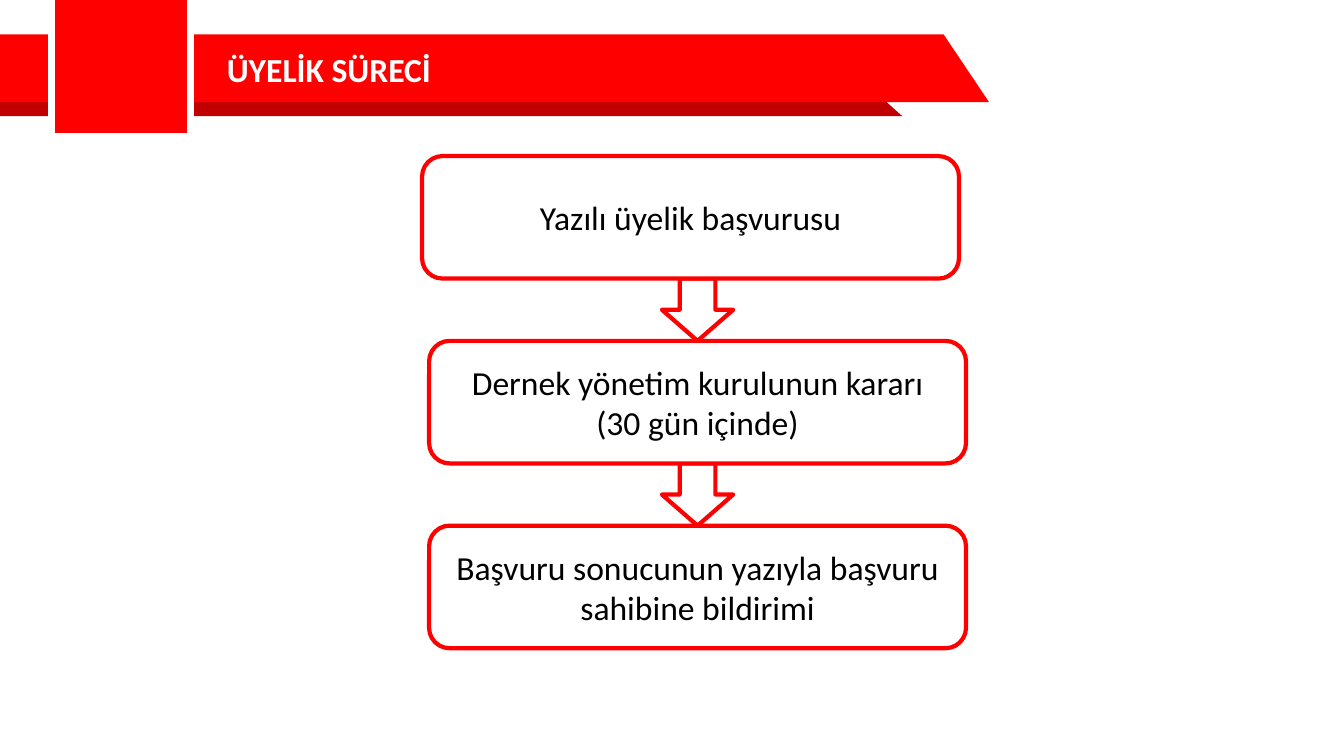
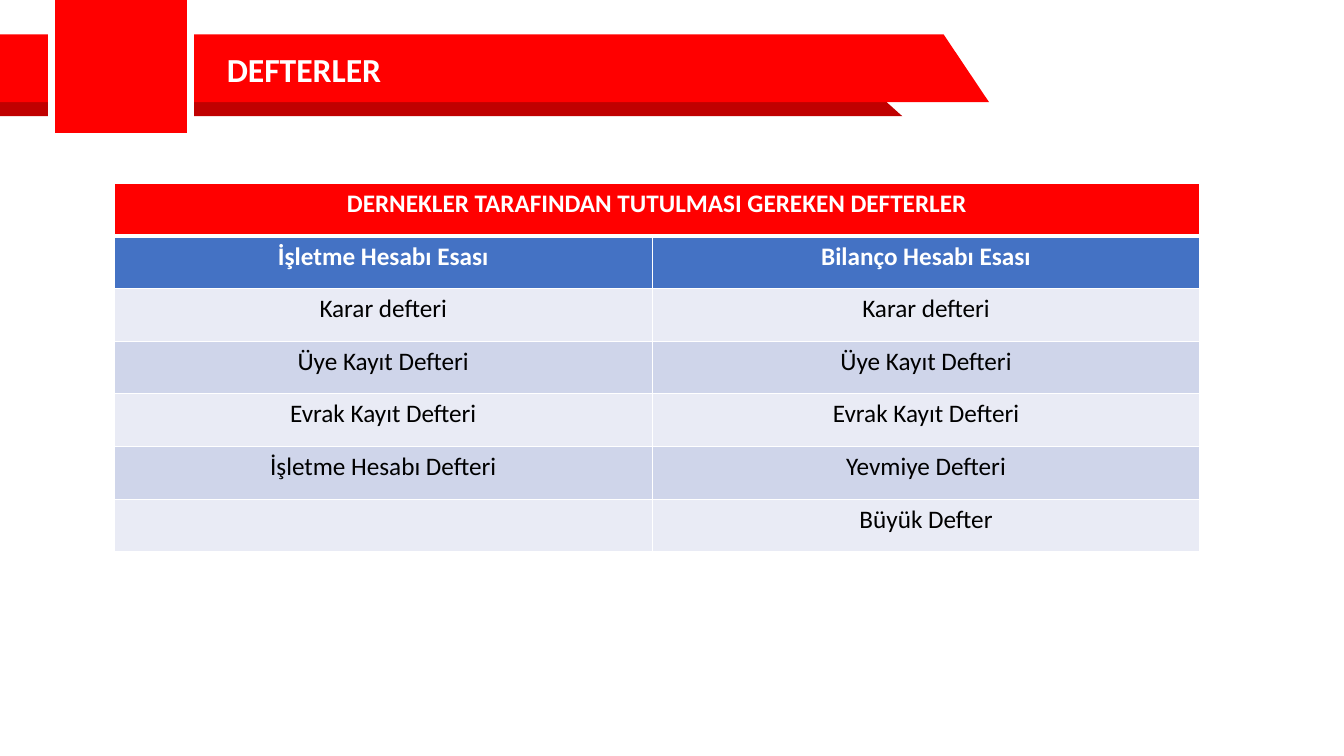
from lxml.etree import SubElement
from pptx import Presentation
from pptx.dml.color import RGBColor
from pptx.enum.shapes import MSO_SHAPE as SHAPE
from pptx.enum.text import MSO_ANCHOR as ANCHOR, MSO_AUTO_SIZE as AUTO_SIZE, PP_ALIGN as ALIGN
from pptx.oxml.ns import qn
from pptx.util import Pt

COLORS = {
    "red": "FF0000",
    "dark_red": "C00000",
    "blue": "4472C4",
    "light": "E9EBF5",
    "mid": "CFD5EA",
    "white": "FFFFFF",
    "black": "000000",
}
FONT = "Calibri"
TITLE_ONLY = 5


def rgb(name):
    return RGBColor.from_string(COLORS[name])


class Deck:
    """Holds the shared style and the slide being filled."""

    def __init__(self):
        self.prs = Presentation()
        self.prs.slide_width, self.prs.slide_height = Pt(960), Pt(540)
        self.layout = self.prs.slide_layouts[TITLE_ONLY]
        self.slide = None

    def start(self, title):
        first = self.slide is None
        self.slide = self.prs.slides.add_slide(self.layout)
        if first:
            self.decorate_layout()
        heading = self.slide.shapes.title
        heading.left, heading.top = Pt(154.8), Pt(31)
        heading.width, heading.height = Pt(500), Pt(36)
        frame = heading.text_frame
        frame.word_wrap = True
        frame.auto_size = AUTO_SIZE.NONE
        frame.vertical_anchor = ANCHOR.MIDDLE
        self.set_text(frame, title, 24, "white", bold=True, align=ALIGN.LEFT)

    def decorate_layout(self):
        """Draw the header on the first slide, then move it to the layout."""
        for holder in list(self.layout.placeholders):
            if holder.placeholder_format.idx != 0:
                self.layout.shapes.element.remove(holder.element)
        header = [
            self.band([(0, 34), (591, 35), (644.5, 83), (0, 83)], "dark_red"),
            self.band([(0, 24.5), (674, 24.5), (706.5, 73), (0, 73)], "red"),
            self.shape(SHAPE.RECTANGLE, 36.5, -11.5, 99.5, 109, "red", "white", 5),
        ]
        for part in header:
            self.layout.shapes.element.append(part.element)

    def band(self, points, fill):
        corners = [(Pt(x), Pt(y)) for x, y in points]
        builder = self.slide.shapes.build_freeform(*corners[0])
        builder.add_line_segments(corners[1:], close=True)
        return self.style(builder.convert_to_shape(), fill)

    def shape(self, kind, left, top, width, height, fill, line, line_width):
        added = self.slide.shapes.add_shape(kind, Pt(left), Pt(top), Pt(width), Pt(height))
        return self.style(added, fill, line, line_width)

    def style(self, shape, fill, line=None, line_width=0):
        shape.shadow.inherit = False
        shape.fill.solid()
        shape.fill.fore_color.rgb = rgb(fill)
        if line:
            shape.line.color.rgb = rgb(line)
            shape.line.width = Pt(line_width)
        else:
            shape.line.fill.background()
        return shape

    def set_text(self, frame, text, size, color, bold=False, align=ALIGN.CENTER):
        frame.text = text
        for paragraph in frame.paragraphs:
            paragraph.alignment = align
            font = paragraph.font
            font.name, font.size, font.bold = FONT, Pt(size), bold
            font.color.rgb = rgb(color)

    def step(self, text, left, top, width, height):
        box = self.shape(SHAPE.ROUNDED_RECTANGLE, left, top, width, height, "white", "red", 3)
        self.set_text(box.text_frame, text, 24, "black")

    def down_arrow(self, left, top, width, height):
        self.shape(SHAPE.DOWN_ARROW, left, top, width, height, "white", "red", 3)

    def table(self, rows, left, top, widths, row_height):
        """Build a table whose first row spans all columns and second row heads them."""
        table = self.slide.shapes.add_table(
            len(rows), len(widths), Pt(left), Pt(top),
            Pt(sum(widths)), Pt(row_height * len(rows))).table
        table.first_row = table.horz_banding = False
        for column, width in zip(table.columns, widths):
            column.width = Pt(width)
        for r, texts in enumerate(rows):
            table.rows[r].height = Pt(row_height)
            fill = ("red", "blue")[r] if r < 2 else ("light", "mid")[r % 2]
            for c, text in enumerate(texts):
                cell = table.cell(r, c)
                self.borders(cell, top=3 if r == 1 else 1, bottom=3 if r == 0 else 1)
                cell.fill.solid()
                cell.fill.fore_color.rgb = rgb(fill)
                self.set_text(cell.text_frame, text, 18, "white" if r < 2 else "black", bold=r < 2)
        table.cell(0, 0).merge(table.cell(0, len(widths) - 1))

    def borders(self, cell, top, bottom):
        properties = cell._tc.get_or_add_tcPr()
        for side, width in (("L", 1), ("R", 1), ("T", top), ("B", bottom)):
            line = SubElement(properties, qn(f"a:ln{side}"), w=str(Pt(width)))
            solid = SubElement(line, qn("a:solidFill"))
            SubElement(solid, qn("a:srgbClr"), val=COLORS["white"])


def membership(deck):
    deck.start("ÜYELİK SÜRECİ")
    left, top, width, height, pitch = 306.5, 111.5, 383.5, 87.5, 132
    arrow_width = 51
    steps = [
        ("Yazılı üyelik başvurusu", left - 5),
        ("Dernek yönetim kurulunun kararı\n(30 gün içinde)", left),
        ("Başvuru sonucunun yazıyla başvuru sahibine bildirimi", left),
    ]
    for i in range(len(steps) - 1):
        deck.down_arrow(left + (width - arrow_width) / 2, top + i * pitch + height,
                        arrow_width, pitch - height)
    for i, (text, step_left) in enumerate(steps):
        deck.step(text, step_left, top + i * pitch, width, height)


def ledgers(deck):
    deck.start("DEFTERLER")
    rows = [
        ("DERNEKLER TARAFINDAN TUTULMASI GEREKEN DEFTERLER", ""),
        ("İşletme Hesabı Esası", "Bilanço Hesabı Esası"),
        ("Karar defteri", "Karar defteri"),
        ("Üye Kayıt Defteri", "Üye Kayıt Defteri"),
        ("Evrak Kayıt Defteri", "Evrak Kayıt Defteri"),
        ("İşletme Hesabı Defteri", "Yevmiye Defteri"),
        ("", "Büyük Defter"),
    ]
    deck.table(rows, 81.5, 131, (384.5, 391), 37.6)


def main():
    deck = Deck()
    membership(deck)
    ledgers(deck)
    deck.prs.save("out.pptx")


if __name__ == "__main__":
    main()
